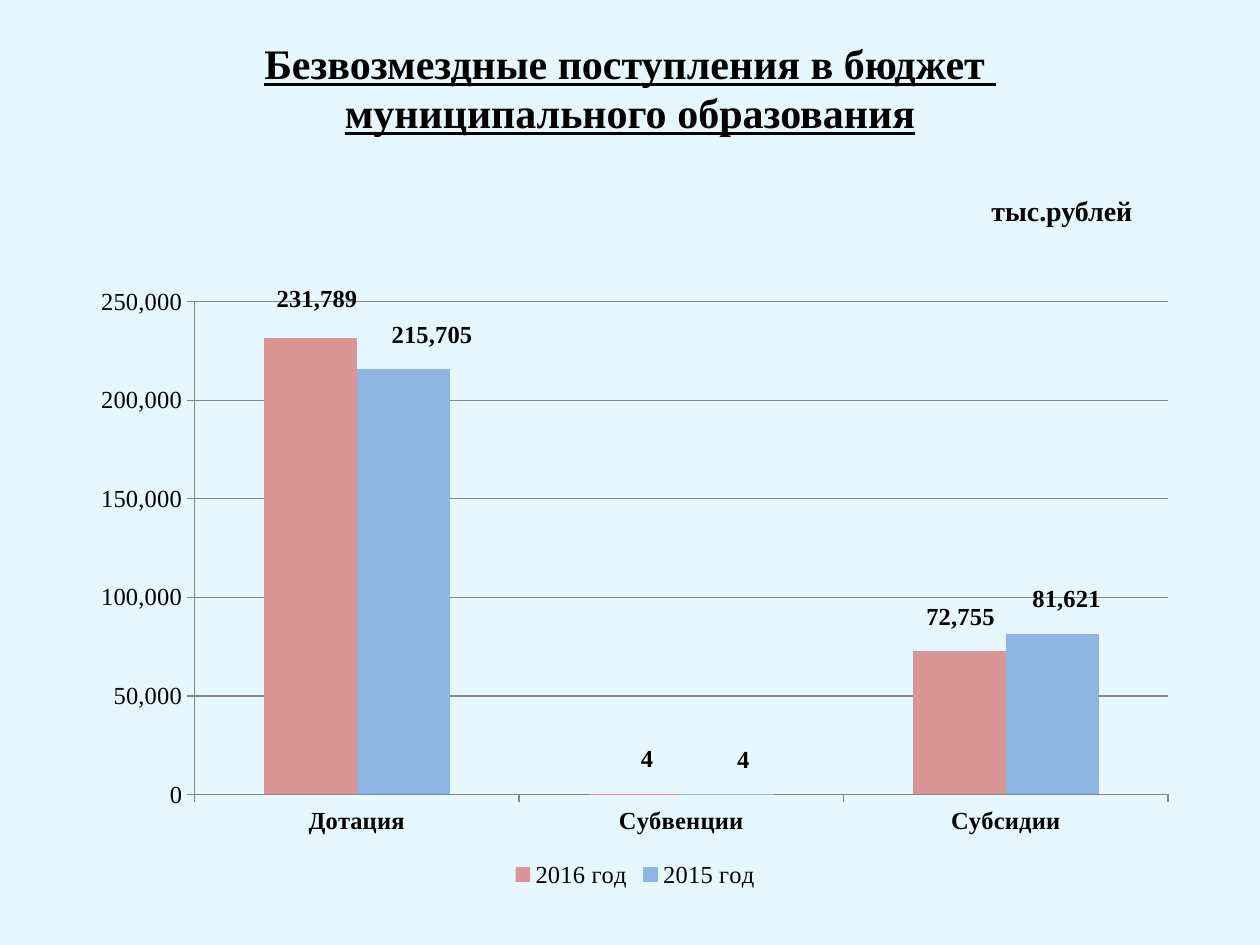
from dataclasses import dataclass

from lxml import etree
from pptx import Presentation
from pptx.chart.data import CategoryChartData
from pptx.dml.color import RGBColor
from pptx.enum.chart import (XL_CHART_TYPE, XL_LABEL_POSITION,
                             XL_LEGEND_POSITION, XL_TICK_MARK)
from pptx.enum.text import MSO_ANCHOR, PP_ALIGN
from pptx.oxml.ns import qn
from pptx.util import Cm, Pt

COLUMNS = XL_CHART_TYPE.COLUMN_CLUSTERED
OUTSIDE_END = XL_LABEL_POSITION.OUTSIDE_END
BOTTOM = XL_LEGEND_POSITION.BOTTOM
TICK_OUT = XL_TICK_MARK.OUTSIDE
CENTER, RIGHT = PP_ALIGN.CENTER, PP_ALIGN.RIGHT
MIDDLE, TOP = MSO_ANCHOR.MIDDLE, MSO_ANCHOR.TOP

FONT = "Times New Roman"
NUMBER_FORMAT = "#,##0"
BACKGROUND, BLACK, GRAY = "E6F7FF", "000000", "868686"
CATEGORIES = ("Дотация", "Субвенции", "Субсидии")
PLOT_LAYOUT = {"layoutTarget": "inner", "xMode": "edge", "yMode": "edge",
               "x": 0.104, "y": 0.042, "w": 0.875, "h": 0.798}


@dataclass
class TextBlock:
    text: str
    box: tuple[float, float, float, float]  # left, top, width, height in cm
    format: dict
    align: PP_ALIGN
    anchor: MSO_ANCHOR
    wrap: bool = True
    line_spacing: float | None = None


@dataclass
class YearSeries:
    name: str
    color: str
    values: tuple[int, ...]
    label_offsets: tuple[tuple[float, float], ...]  # shares of the chart size


TEXTS = (
    TextBlock("Безвозмездные поступления в бюджет \vмуниципального образования",
              (1.27, 0, 22.86, 3.56),
              {"size": Pt(24), "bold": True, "underline": True},
              CENTER, MIDDLE, line_spacing=28),
    TextBlock("тыс.рублей", (19.68, 3.78, 3.4, 0.94),
              {"size": Pt(16), "bold": True}, RIGHT, TOP, wrap=False),
)
YEARS = (
    YearSeries("2015 год", "8EB4E3", (215705, 4, 81621),
               ((0.026, -0.025), (0.014, -0.025), (0.013, -0.026))),
    YearSeries("2016 год", "D99694", (231789, 4, 72755),
               ((0.006, -0.033), (0.011, -0.027), (0.001, -0.025))),
)


def rgb(color: str) -> RGBColor:
    return RGBColor.from_string(color)


def format_font(font, values: dict) -> None:
    for name, value in {"name": FONT, **values}.items():
        setattr(font, name, value)
    font.color.rgb = rgb(BLACK)


def manual_layout(values: dict):
    layout = etree.Element(qn("c:layout"))
    manual = etree.SubElement(layout, qn("c:manualLayout"))
    for name, value in values.items():
        etree.SubElement(manual, qn(f"c:{name}")).set("val", str(value))
    return layout


def add_text(slide, block: TextBlock) -> None:
    shape = slide.shapes.add_textbox(*map(Cm, block.box))
    frame = shape.text_frame
    frame.word_wrap = block.wrap
    frame.vertical_anchor = block.anchor
    paragraph = frame.paragraphs[0]
    paragraph.text = block.text
    paragraph.alignment = block.align
    if block.line_spacing:
        paragraph.line_spacing = Pt(block.line_spacing)
    for run in paragraph.runs:
        format_font(run.font, block.format)


def format_axis(axis, bold: bool) -> None:
    axis.major_tick_mark = TICK_OUT
    axis.format.line.color.rgb = rgb(GRAY)
    format_font(axis.tick_labels.font, {"size": Pt(14), "bold": bold})


def format_series(series, year: YearSeries) -> None:
    series.format.fill.solid()
    series.format.fill.fore_color.rgb = rgb(year.color)
    series.invert_if_negative = False
    label_font = {"size": Pt(14), "bold": True}
    labels = series.data_labels
    labels.show_value = True
    labels.number_format = NUMBER_FORMAT
    labels.number_format_is_linked = False
    format_font(labels.font, label_font)
    for leader_lines in labels._element.findall(qn("c:showLeaderLines")):
        leader_lines.set("val", "0")
    # Each label is shifted from its place above the column
    for index, (x, y) in enumerate(year.label_offsets):
        label = series.points[index].data_label
        format_font(label.font, label_font)
        label.position = OUTSIDE_END
        element = labels._element.xpath(f"c:dLbl[c:idx/@val='{index}']")[0]
        element.insert(1, manual_layout({"x": x, "y": y}))


def add_income_chart(slide) -> None:
    data = CategoryChartData(number_format=NUMBER_FORMAT)
    data.categories = CATEGORIES
    for year in YEARS:
        data.add_series(year.name, year.values)
    box = map(Cm, (1.59, 5.56, 22.43, 12.45))
    chart = slide.shapes.add_chart(COLUMNS, *box, data).chart
    chart.has_title = False
    chart.font.name = "Calibri"
    chart.font.size = Pt(18)
    chart.font.color.rgb = rgb(BLACK)

    # Columns and their labels
    plot = chart.plots[0]
    plot.gap_width = 150
    plot.overlap = 0
    plot.vary_by_categories = False
    for series, year in zip(plot.series, YEARS):
        format_series(series, year)

    # The later year is drawn to the left of the earlier one
    earlier, later = (series._element for series in plot.series)
    earlier.addprevious(later)

    # Axes
    format_axis(chart.category_axis, True)
    value_axis = chart.value_axis
    format_axis(value_axis, False)
    value_axis.minimum_scale = 0
    value_axis.maximum_scale = 250000
    value_axis.major_unit = 50000
    value_axis.has_major_gridlines = True
    value_axis.major_gridlines.format.line.color.rgb = rgb(GRAY)
    value_axis.tick_labels.number_format = NUMBER_FORMAT
    value_axis.tick_labels.number_format_is_linked = False

    # Legend
    chart.has_legend = True
    chart.legend.position = BOTTOM
    chart.legend.include_in_layout = False
    format_font(chart.legend.font, {"size": Pt(14), "bold": False})

    # Plot area position
    plot_area = chart._chartSpace.chart.plotArea
    for layout in plot_area.findall(qn("c:layout")):
        plot_area.remove(layout)
    plot_area.insert(0, manual_layout(PLOT_LAYOUT))


def main() -> None:
    presentation = Presentation()
    presentation.slide_width = Cm(25.4)
    presentation.slide_height = Cm(19.05)
    slide = presentation.slides.add_slide(presentation.slide_layouts[6])
    slide.background.fill.solid()
    slide.background.fill.fore_color.rgb = rgb(BACKGROUND)
    title, unit = TEXTS
    add_text(slide, title)
    add_income_chart(slide)
    add_text(slide, unit)
    presentation.save("out.pptx")


if __name__ == "__main__":
    main()
